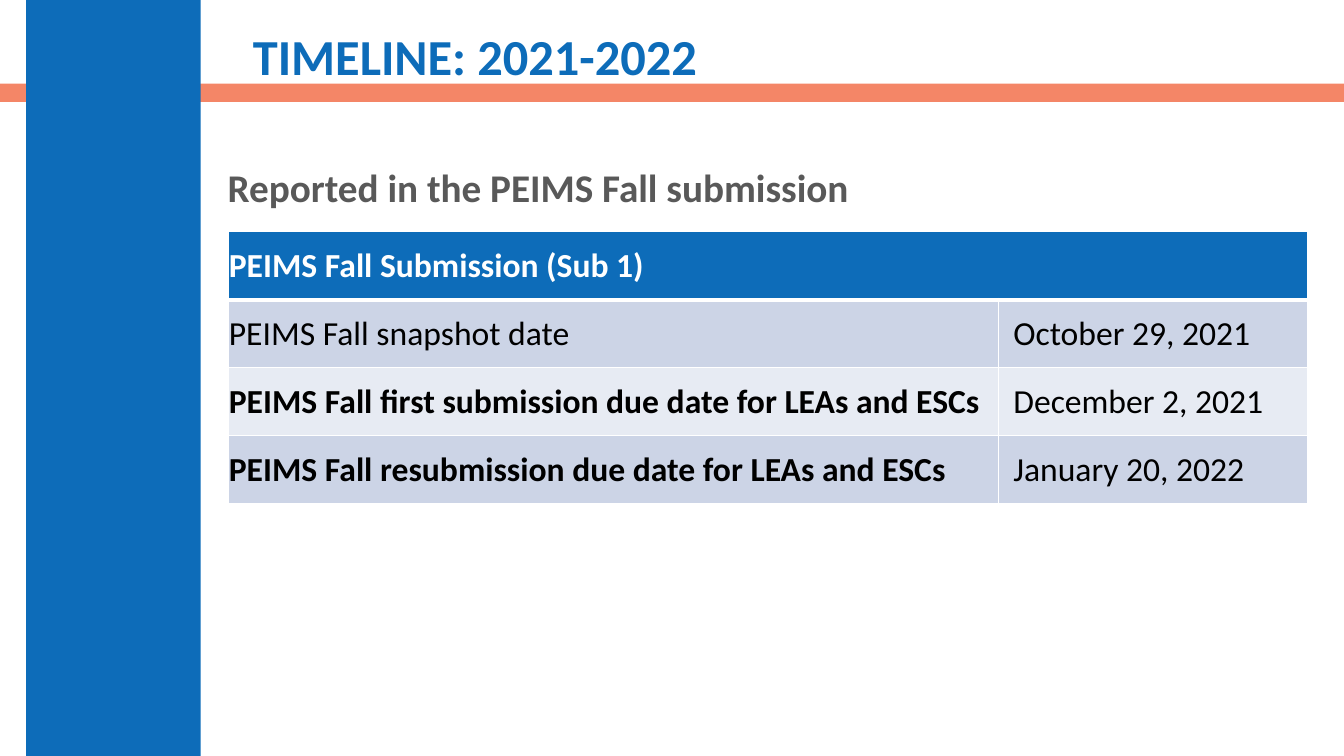
"""Build the submission timeline slide."""
from lxml.etree import SubElement
from pptx import Presentation
from pptx.dml.color import RGBColor
from pptx.enum.shapes import MSO_SHAPE
from pptx.enum.text import MSO_ANCHOR
from pptx.oxml.ns import qn
from pptx.util import Inches, Pt

BLUE, CORAL, GREY = "0D6CB9", "F16038", "595959"
WHITE, BLACK = "FFFFFF", "000000"
BANDS = ["CCD4E6", "E7EBF3"]


def paint(fill, tint):
    fill.solid()
    fill.fore_color.rgb = RGBColor.from_string(tint)


def style(para, size, tint, bold):
    font = para.font
    font.name, font.size, font.bold = "Calibri", Pt(size), bold
    font.color.rgb = RGBColor.from_string(tint)


deck = Presentation()
deck.slide_width, deck.slide_height = Inches(13.33), Inches(7.5)
slide = deck.slides.add_slide(deck.slide_layouts[6])
shapes = slide.shapes

bars = [(0, 0.83, 13.33, 0.18, CORAL), (0.26, 0, 1.73, 7.5, BLUE)]
for *place, tint in bars:
    bar = shapes.add_shape(MSO_SHAPE.RECTANGLE, *map(Inches, place))
    bar.shadow.inherit = False
    bar.line.fill.background()
    paint(bar.fill, tint)
    if tint == CORAL:
        shade = bar.fill._xPr.find(qn("a:solidFill"))[0]
        SubElement(shade, qn("a:alpha"), val="76000")

texts = [
    ("TIMELINE: 2021-2022", (2.41, 0.18, 10.53, 0.82), 36, BLUE, MSO_ANCHOR.MIDDLE),
    ("Reported in the PEIMS Fall submission", (2.16, 1.62, 10.08, 0.6), 28, GREY, MSO_ANCHOR.TOP),
]
for words, place, size, tint, anchor in texts:
    frame = shapes.add_textbox(*map(Inches, place)).text_frame
    frame.word_wrap, frame.vertical_anchor = True, anchor
    para = frame.paragraphs[0]
    para.text, para.line_spacing = words, 0.9
    style(para, size, tint, True)

rows = [
    ("PEIMS Fall Submission (Sub 1)", ""),
    ("PEIMS Fall snapshot date", "  October 29, 2021"),
    ("PEIMS Fall first submission due date for LEAs and ESCs", "  December 2, 2021"),
    ("PEIMS Fall resubmission due date for LEAs and ESCs", "  January 20, 2022"),
]
widths = [7.63, 3.07]
high = 0.675
table = shapes.add_table(
    len(rows), len(widths), Inches(2.27), Inches(2.3),
    Inches(sum(widths)), Inches(high * len(rows))).table
for col, width in zip(table.columns, widths):
    col.width = Inches(width)
for r, row in enumerate(rows):
    for c, words in enumerate(row):
        cell = table.cell(r, c)
        cell.margin_left = cell.margin_right = 0
        cell.margin_top = cell.margin_bottom = 0
        cell.vertical_anchor = MSO_ANCHOR.MIDDLE
        para = cell.text_frame.paragraphs[0]
        para.text = words
        style(para, 24, BLACK if r else WHITE, r == 0 or (r > 1 and c == 0))
        props = cell._tc.get_or_add_tcPr()
        for side in "LRTB":
            thick = 3 if (r, side) in [(0, "B"), (1, "T")] else 1
            edge = SubElement(props, qn("a:ln" + side), w=str(Pt(thick)))
            ink = SubElement(edge, qn("a:solidFill"))
            SubElement(ink, qn("a:srgbClr"), val=WHITE)
        paint(cell.fill, BANDS[(r - 1) % 2] if r else BLUE)
table.cell(0, 0).merge(table.cell(0, 1))

deck.save("out.pptx")
